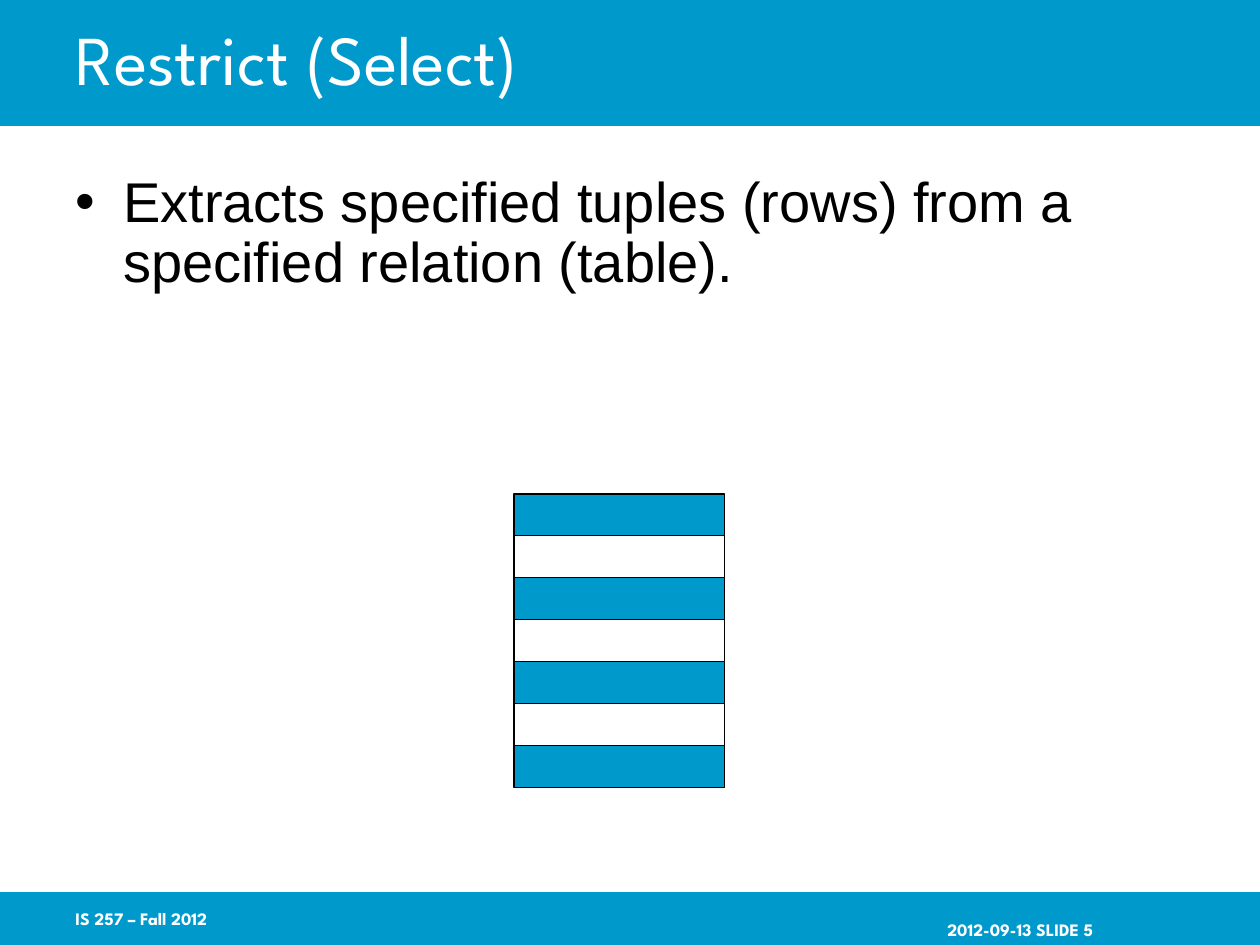
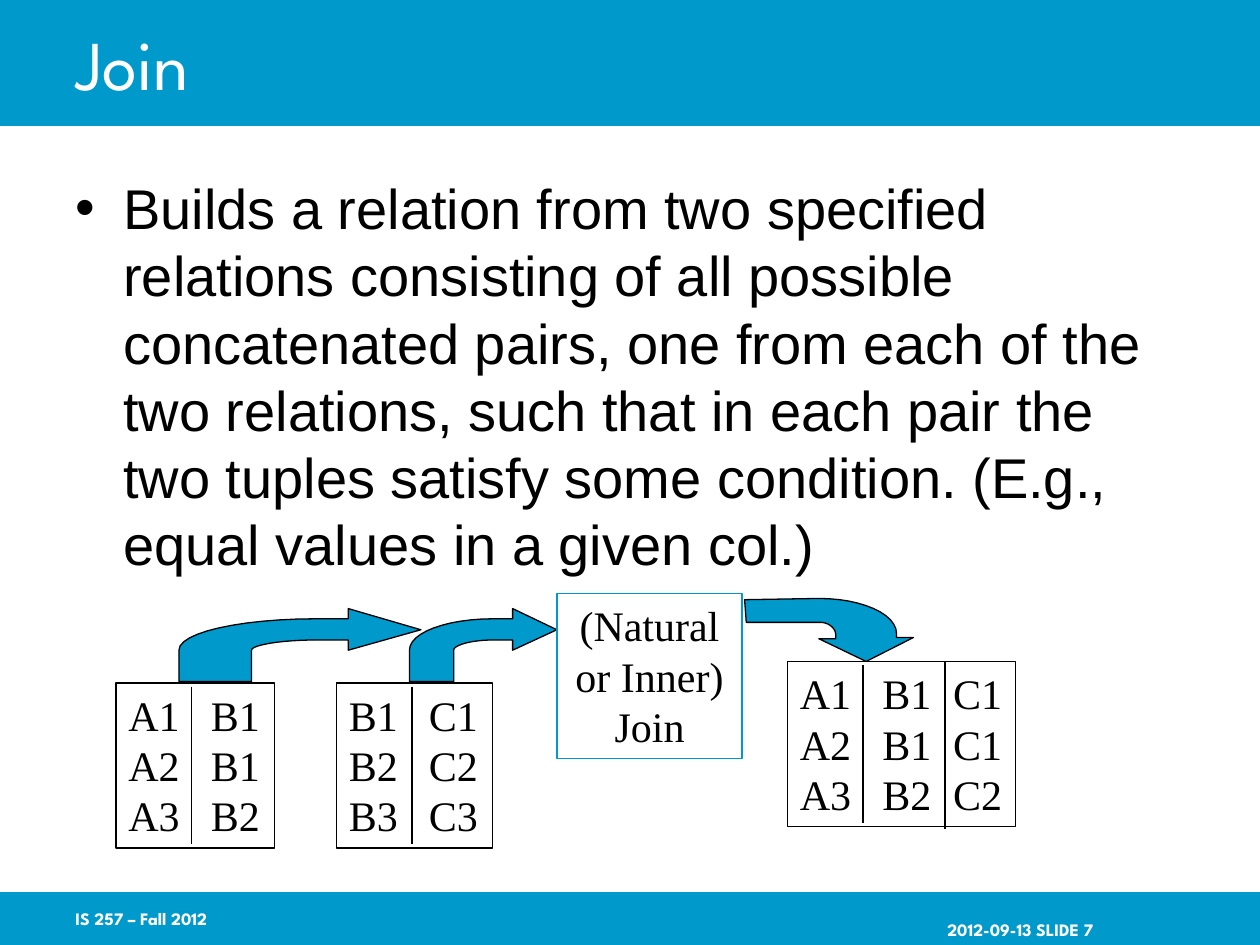
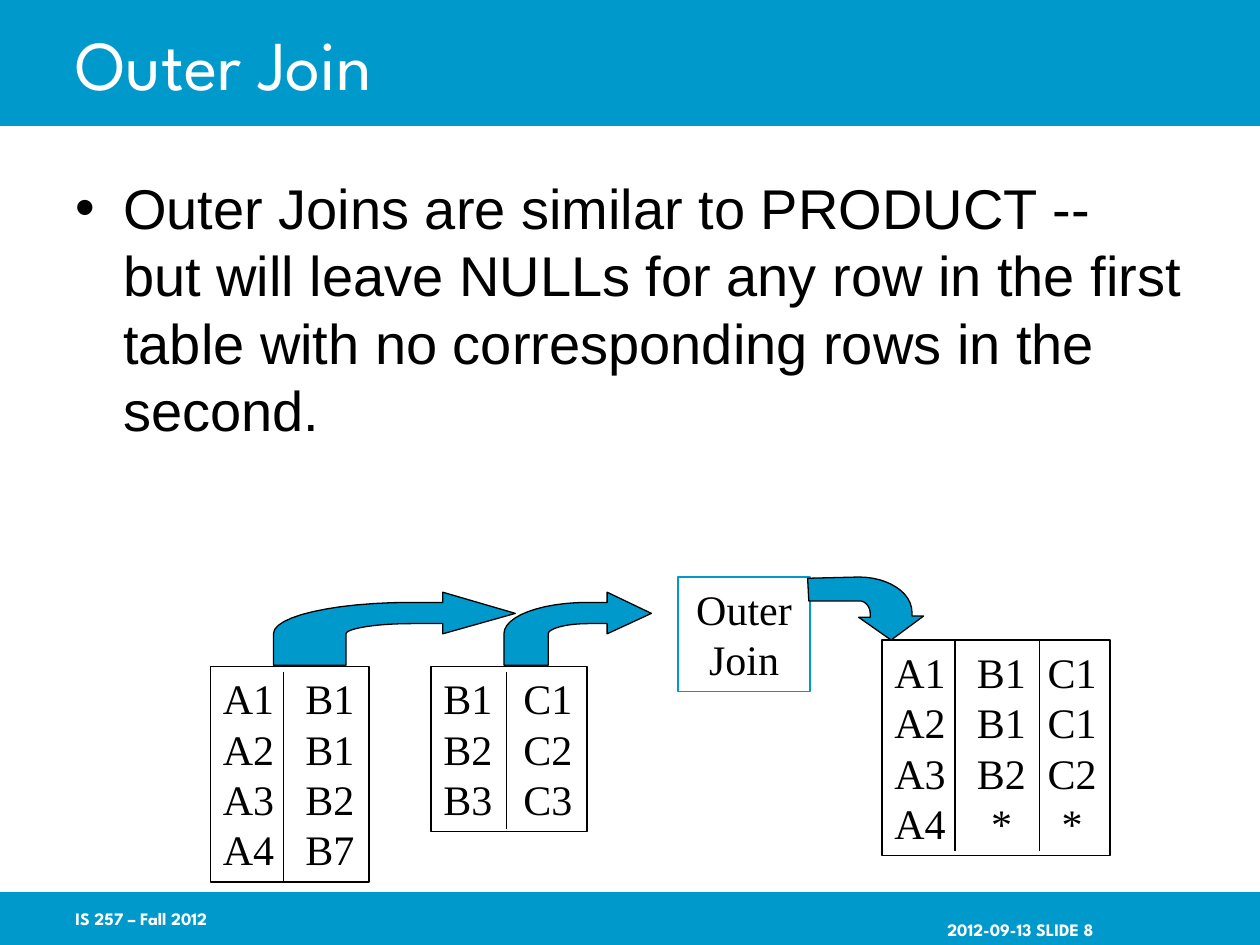
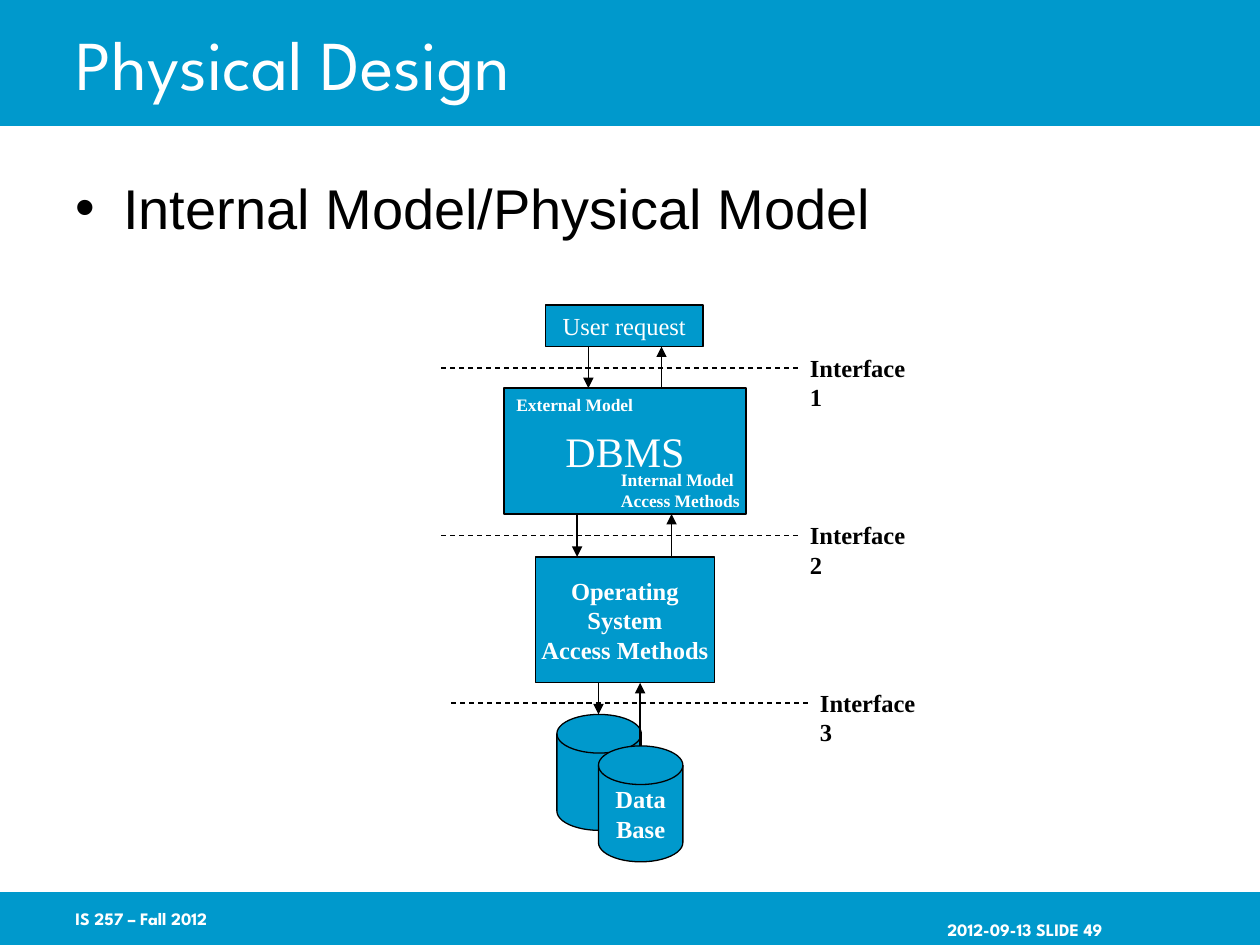
from dataclasses import dataclass

from lxml import etree
from pptx import Presentation
from pptx.dml import color
from pptx.enum import dml, shapes, text
from pptx.oxml import ns
from pptx.util import Inches, Pt


@dataclass(frozen=True)
class Theme:
    blue: str = "0099CC"
    white: str = "FFFFFF"
    black: str = "000000"
    brand_font: str = "League Spartan"
    body_font: str = "Arial"
    figure_font: str = "Times New Roman"
    title_size: int = 40
    body_size: int = 32
    data_size: int = 24
    label_size: int = 14
    small_size: int = 10
    line_width: float = 0.75


THEME = Theme()
RECT = shapes.MSO_SHAPE.RECTANGLE
DISK = shapes.MSO_SHAPE.FLOWCHART_MAGNETIC_DISK
CENTER = text.PP_ALIGN.CENTER
MIDDLE = text.MSO_ANCHOR.MIDDLE

# Arrow outlines in a unit box: a pair is a corner, three pairs are a curve
ARROW_RIGHT = [(1, .29), (.7, 0), (.7, .14), (.57, .14),
               ((.25, .14), (0, .33), (0, .57)), (0, 1), (.3, 1), (.3, .57),
               ((.3, .5), (.42, .43), (.57, .43)), (.7, .43), (.7, .57)]
ARROW_DOWN = [(.72, 1), (1, .62), (.9, .62), (.9, .56),
              ((.9, .24), (.69, 0), (.44, 0)), (0, .02), (.01, .38), (.44, .38),
              ((.49, .37), (.54, .46), (.54, .58)), (.54, .64), (.44, .64)]
CURVE_STEPS = 12


# ---- Shared helpers ----
def rgb(value):
    return color.RGBColor.from_string(value)


def inches(*lengths):
    return [Inches(length) for length in lengths]


def paint(shape, fill=None, line=THEME.black):
    shape.shadow.inherit = False
    if fill:
        shape.fill.solid()
        shape.fill.fore_color.rgb = rgb(fill)
    else:
        shape.fill.background()
    if line:
        shape.line.color.rgb = rgb(line)
        shape.line.width = Pt(THEME.line_width)
    else:
        shape.line.fill.background()
    return shape


def add_block(slide, box, fill=None, line=THEME.black, kind=RECT):
    return paint(slide.shapes.add_shape(kind, *inches(*box)), fill, line)


def sub(parent, tag, **attributes):
    return etree.SubElement(parent, ns.qn(tag), attributes)


def write(shape, lines, size, font=THEME.figure_font, ink=THEME.black, bold=False,
          align=text.PP_ALIGN.LEFT, spacing=None, bullet=None, tabs=(), **frame_values):
    """Fill a shape with one paragraph per line; frame_values go to the text frame."""
    frame = shape.text_frame
    settings = {"word_wrap": True, "vertical_anchor": text.MSO_ANCHOR.TOP, **frame_values}
    for key, value in settings.items():
        setattr(frame, key, value)
    for number, line in enumerate(lines):
        paragraph = frame.paragraphs[0] if number == 0 else frame.add_paragraph()
        properties = paragraph._p.get_or_add_pPr()
        if bullet:
            indent = Inches(0.38)
            properties.set("marL", str(indent))
            properties.set("indent", str(-indent))
            sub(properties, "a:buFont", typeface=font)
            sub(properties, "a:buChar", char=bullet)
        if tabs:
            stops = sub(properties, "a:tabLst")
            for stop in tabs:
                sub(stops, "a:tab", pos=str(Inches(stop)), algn="ctr")
        paragraph.alignment = align
        if spacing:
            paragraph.line_spacing = spacing
        run = paragraph.add_run()
        run.text = line
        for key, value in {"name": font, "size": Pt(size), "bold": bold}.items():
            setattr(run.font, key, value)
        run.font.color.rgb = rgb(ink)


def add_label(slide, box, lines, size, **style):
    label = slide.shapes.add_textbox(*inches(*box))
    write(label, lines, size, **style)


def add_line(slide, start, end, dashed=False, arrow=False):
    line = slide.shapes.add_connector(
        shapes.MSO_CONNECTOR.STRAIGHT, *inches(*start, *end))
    line.line.color.rgb = rgb(THEME.black)
    line.line.width = Pt(THEME.line_width)
    if dashed:
        line.line.dash_style = dml.MSO_LINE.DASH
    if arrow:
        sub(line.line._get_or_add_ln(), "a:tailEnd", type="triangle")
    sub(line._element.spPr, "a:effectLst")


def bezier(start, first, second, end):
    for step in range(1, CURVE_STEPS + 1):
        t = step / CURVE_STEPS
        weights = ((1 - t) ** 3, 3 * t * (1 - t) ** 2, 3 * t * t * (1 - t), t ** 3)
        yield tuple(sum(w * point[axis] for w, point in
                        zip(weights, (start, first, second, end))) for axis in (0, 1))


def add_bent_arrow(slide, box, outline):
    left, top, width, height = box
    corners = []
    for step in outline:
        corners.extend(bezier(corners[-1], *step) if len(step) == 3 else [step])
    points = [inches(left + x * width, top + y * height) for x, y in corners]
    builder = slide.shapes.build_freeform(*points[0])
    builder.add_line_segments(points[1:])
    paint(builder.convert_to_shape(), THEME.blue)


# ---- Slide frame: bands, title, footer, lead bullet ----
def add_bands(layout, slide):
    """Draw the bands once and hand them to the layout, behind its placeholders."""
    for position, box in enumerate([(0, 0, 10, 1), (0, 7.08, 10, 0.42)]):
        band = add_block(slide, box, THEME.blue, line=None)
        layout.shapes._spTree.insert(2 + position, band._element)


def add_frame(slide, title, number, lead, spacing=None):
    heading = slide.shapes.title
    for key, value in zip(("left", "top", "width", "height"), inches(0.5, 0, 8.5, 1)):
        setattr(heading, key, value)
    write(heading, [title], THEME.title_size, THEME.brand_font, THEME.white,
          spacing=spacing, vertical_anchor=MIDDLE, auto_size=text.MSO_AUTO_SIZE.NONE)
    footers = [(0.5, "IS 257 – Fall 2012", 0.05),
               (7.42, f"2012-09-13 SLIDE {number}", 0.22)]
    for left, words, inset in footers:
        add_label(slide, (left, 7.08, 2.08, 0.42), [words], THEME.small_size,
                  font=THEME.brand_font, ink=THEME.white, bold=True,
                  vertical_anchor=MIDDLE, margin_top=Inches(inset), margin_right=0)
    add_label(slide, (0.5, 1.33, 9, 5.42), [lead], THEME.body_size,
              font=THEME.body_font, spacing=spacing, bullet="•", margin_bottom=0)


# ---- Restrict: striped relation ----
def draw_striped_relation(slide, box, rows=7):
    left, top, width, height = box
    add_block(slide, box, THEME.blue)
    row_height = height / rows
    for row in range(1, rows, 2):
        add_block(slide, (left, top + row * row_height, width, row_height), THEME.white)


# ---- Joins: two relations, an operation and its result ----
def text_height(lines):
    return 0.11 + 0.4 * len(lines)


def draw_relation(slide, left, top, width, rows, tabs, dividers):
    relation = add_block(slide, (left, top, width, text_height(rows)))
    write(relation, ["\t".join(row.split()) for row in rows], THEME.data_size,
          tabs=tabs, margin_right=0)
    for x, start, end in dividers:
        add_line(slide, (left + x, top + start), (left + x, top + end))


def draw_join(slide, left, top, first, second, result, operation, result_top, down_arrow):
    """first, second and result are (rows, dividers)."""
    draw_relation(slide, left, top + 0.71, 1.26, first[0], [0.85], first[1])
    draw_relation(slide, left + 1.75, top + 0.71, 1.24, second[0], [0.83], second[1])
    draw_relation(slide, left + 5.33, top + result_top, 1.81, result[0],
                  [0.85, 1.41], result[1])
    for offset, width in [(0.5, 1.92), (2.33, 1.17)]:
        add_bent_arrow(slide, (left + offset, top + 0.12, width, 0.58), ARROW_RIGHT)
    offset, width, lines = operation
    step = add_block(slide, (left + offset, top, width, text_height(lines)),
                     line=THEME.blue)
    write(step, lines, THEME.data_size, align=CENTER, word_wrap=False)
    x, y, width, height = down_arrow
    add_bent_arrow(slide, (left + x, top + y, width, height), ARROW_DOWN)


# ---- Physical design: layers from user request to data base ----
def draw_layers(slide, left, top):
    def at(x, y, *size):
        return (left + x, top + y, *size)

    small = {"ink": THEME.white, "bold": True, "word_wrap": False,
             "auto_size": text.MSO_AUTO_SIZE.SHAPE_TO_FIT_TEXT}
    layers = [
        (RECT, (0.75, 2, 1.42, 1), ["Operating", "System", "Access Methods"],
         THEME.label_size, True),
        (DISK, (0.92, 3.25, 0.67, 0.92), [], THEME.label_size, True),
        (DISK, (1.25, 3.5, 0.67, 0.92), ["Data", "Base"], THEME.label_size, True),
        (RECT, (0.83, 0, 1.25, 0.33), ["User request"], THEME.label_size, False),
        (RECT, (0.5, 0.66, 1.92, 1), ["DBMS"], THEME.data_size, False),
    ]
    for kind, box, lines, size, bold in layers:
        layer = add_block(slide, at(*box), THEME.blue, kind=kind)
        write(layer, lines, size, ink=THEME.white, bold=bold, align=CENTER,
              vertical_anchor=MIDDLE, word_wrap=False)
    add_label(slide, at(1.33, 1.25, 1.15, 0.43), ["Internal Model", "Access Methods"],
              THEME.small_size, **small)
    add_label(slide, at(0.5, 0.66, 1.13, 0.27), ["External Model"],
              THEME.small_size, **small)

    # Requests go down, answers come up
    for x, start, end in [(1.25, 3, 3.25), (1.58, 3.5, 3), (1.08, 1.66, 2),
                          (1.83, 2, 1.66), (1.17, 0.33, 0.66), (1.75, 0.66, 0.33)]:
        add_line(slide, at(x, start), at(x, end), arrow=True)

    # Interfaces between the layers
    for number, (x, y) in enumerate([(0, 0.5), (0, 1.83), (0.08, 3.16)], start=1):
        add_line(slide, at(x, y), at(x + 2.83, y), dashed=True)
        add_label(slide, at(x + 2.83, y - 0.17, 1.1, 0.33), [f"Interface {number}"],
                  THEME.label_size, **{**small, "ink": THEME.black})


# ---- Slides ----
def restrict_slide(slide):
    add_frame(slide, "Restrict (Select)", 5, "Extracts specified tuples (rows) from a "
              "specified relation (table).", spacing=0.9)
    draw_striped_relation(slide, (4.08, 3.92, 1.67, 2.33))


def join_slide(slide):
    add_frame(slide, "Join", 7, "Builds a relation from two specified relations "
              "consisting of all possible concatenated pairs, one from each of the two "
              "relations, such that in each pair the two tuples satisfy some condition. "
              "(E.g., equal values in a given col.)")
    divider = (0.6, 0.03, 1.28)
    draw_join(
        slide, 0.92, 4.71,
        first=(["A1 B1", "A2 B1", "A3 B2"], [divider]),
        second=(["B1 C1", "B2 C2", "B3 C3"], [divider]),
        result=(["A1 B1 C1", "A2 B1 C1", "A3 B2 C2"], [divider, (1.25, 0, 1.33)]),
        operation=(3.5, 1.47, ["(Natural", "or Inner)", "Join"]),
        result_top=0.54, down_arrow=(4.99, 0.04, 1.34, 0.5))


def outer_join_slide(slide):
    add_frame(slide, "Outer Join", 8, "Outer Joins are similar to PRODUCT -- but will "
              "leave NULLs for any row in the first table with no corresponding rows "
              "in the second.")
    draw_join(
        slide, 1.67, 4.58,
        first=(["A1 B1", "A2 B1", "A3 B2", "A4 B7"], [(0.58, 0.04, 1.71)]),
        second=(["B1 C1", "B2 C2", "B3 C3"], [(0.6, 0.04, 1.29)]),
        result=(["A1 B1 C1", "A2 B1 C1", "A3 B2 C2", "A4 * *"],
                [(x, 0, 1.67) for x in (0.58, 1.25)]),
        operation=(3.71, 1.05, ["Outer", "Join"]),
        result_top=0.5, down_arrow=(4.74, 0, 0.92, 0.5))


def physical_design_slide(slide):
    add_frame(slide, "Physical Design", 49, "Internal Model/Physical Model")
    draw_layers(slide, 3.5, 2.42)


def main():
    deck = Presentation()
    deck.slide_width, deck.slide_height = inches(10, 7.5)
    title_only = deck.slide_layouts[5]
    builders = [restrict_slide, join_slide, outer_join_slide, physical_design_slide]
    for number, build in enumerate(builders):
        slide = deck.slides.add_slide(title_only)
        if number == 0:
            add_bands(title_only, slide)
        build(slide)
    deck.save("out.pptx")


if __name__ == "__main__":
    main()
